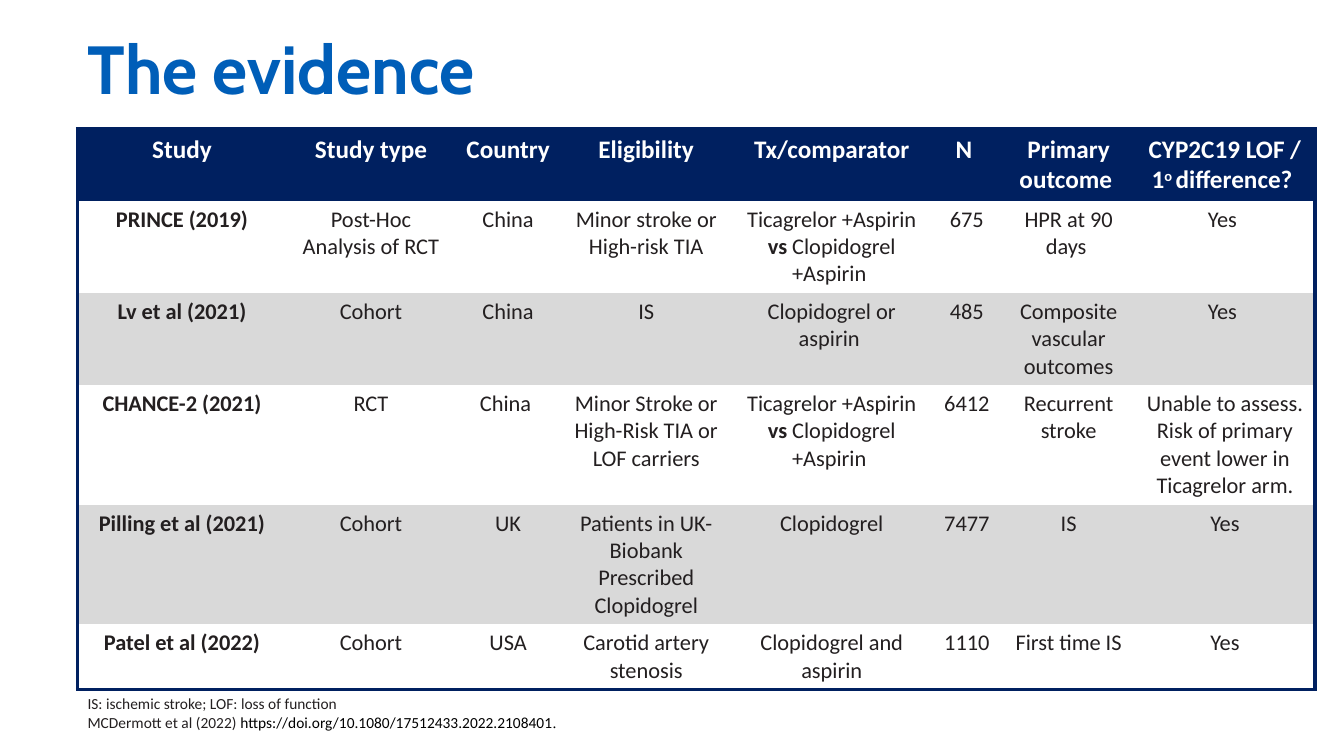
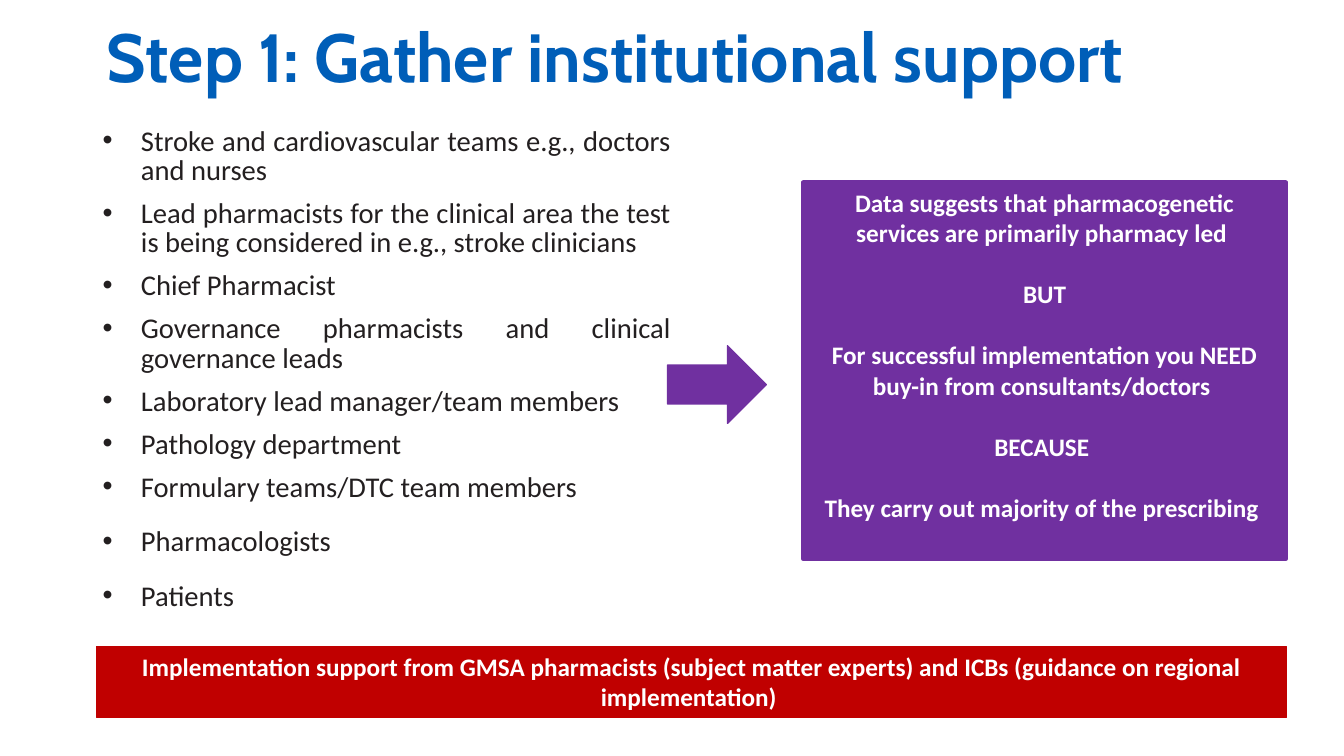
from lxml import etree
from pptx import Presentation
from pptx.dml.color import RGBColor
from pptx.enum.shapes import MSO_SHAPE
from pptx.enum.text import MSO_ANCHOR, MSO_AUTO_SIZE, PP_ALIGN
from pptx.oxml.ns import qn
from pptx.util import Inches, Pt

RECTANGLE, RIGHT_ARROW = MSO_SHAPE.RECTANGLE, MSO_SHAPE.RIGHT_ARROW
TOP, MIDDLE = MSO_ANCHOR.TOP, MSO_ANCHOR.MIDDLE
LEFT, CENTER, JUSTIFY = PP_ALIGN.LEFT, PP_ALIGN.CENTER, PP_ALIGN.JUSTIFY
NO_AUTOFIT = MSO_AUTO_SIZE.NONE

BLUE, NAVY, PURPLE, RED = "005EB8", "002060", "7030A0", "C00000"
INK, BLACK, WHITE, GREY = "231F20", "000000", "FFFFFF", "D9D9D9"
HEADING_FONT, BODY_FONT, SERIF_FONT = "Cabin", "Calibri", "Times New Roman"

TITLE_ONLY = 5
BULLET_INDENT = Inches(0.38)
COLUMN_WIDTHS = [2.07, 1.68, 1.04, 1.7, 1.98, 0.7, 1.32, 1.78]
ROW_HEIGHTS = [0.69, 0.88, 0.88, 1.15, 1.15, 0.62]

TICAGRELOR_VS_CLOPIDOGREL = [
    ("Ticagrelor +Aspirin ", {}),
    ("vs", {"bold": True}),
    (" Clopidogrel +Aspirin ", {}),
]
LOF_DIFFERENCE = [
    ("CYP2C19 LOF / 1", {}),
    ("o ", {"baseline": 30}),
    ("difference? ", {}),
]
STUDIES = [
    ["Study", "Study type", "Country ", "Eligibility", "Tx/comparator", "N ",
     "Primary outcome ", LOF_DIFFERENCE],
    ["PRINCE (2019)", "Post-Hoc Analysis of RCT", "China", "Minor stroke or High-risk TIA",
     TICAGRELOR_VS_CLOPIDOGREL, "675", "HPR at 90 days ", "Yes "],
    ["Lv et al (2021)", "Cohort", "China", "IS", "Clopidogrel or aspirin ", "485",
     "Composite vascular outcomes", "Yes "],
    ["CHANCE-2 (2021)", "RCT", "China ", "Minor Stroke or High-Risk TIA or LOF carriers",
     TICAGRELOR_VS_CLOPIDOGREL, "6412", "Recurrent stroke",
     "Unable to assess. Risk of primary event lower in Ticagrelor arm."],
    ["Pilling et al (2021)", "Cohort", "UK", "Patients in UK-Biobank Prescribed Clopidogrel",
     "Clopidogrel", "7477", "IS", "Yes"],
    ["Patel et al (2022)", "Cohort", "USA", "Carotid artery stenosis",
     "Clopidogrel and aspirin", "1110", "First time IS", "Yes"],
]
FOOTNOTE = [
    "IS: ischemic stroke; LOF: loss of function",
    [
        ("MCDermott et al (2022) ", {}),
        ("https://doi.org/10.1080/17512433.2022.2108401", {"color": BLACK}),
        (".", {"color": BLACK, "font": SERIF_FONT}),
    ],
]
SUPPORTERS = [
    "Stroke and cardiovascular teams e.g., doctors and nurses",
    "Lead pharmacists for the clinical area the test is being considered in "
    "e.g., stroke clinicians",
    "Chief Pharmacist ",
    "Governance pharmacists and clinical governance leads",
    "Laboratory lead manager/team members",
    "Pathology department ",
    "Formulary teams/DTC team members ",
    "Pharmacologists ",
    "Patients",
]
LOOSE_FROM = SUPPORTERS.index("Formulary teams/DTC team members ")
BUY_IN_ARGUMENT = [
    "Data suggests that pharmacogenetic services are primarily pharmacy led ",
    "BUT",
    "For successful implementation you NEED buy-in from consultants/doctors ",
    "BECAUSE ",
    "They carry out majority of the prescribing ",
]
SUPPORT_NOTE = [
    "Implementation support from GMSA pharmacists (subject matter experts) "
    "and ICBs (guidance on regional implementation) "
]


def rgb(color):
    """Turn a hex string into a colour."""
    return RGBColor.from_string(color)


class Deck:
    """Holds the presentation, its style and the current slide."""

    def __init__(self):
        """Start an empty widescreen presentation."""
        self.presentation = Presentation()
        self.presentation.slide_width = Inches(13.33)
        self.presentation.slide_height = Inches(7.5)
        self.slide = None

    def new_slide(self, title, left, top, width, height):
        """Add a slide and place its title."""
        layout = self.presentation.slide_layouts[TITLE_ONLY]
        self.slide = self.presentation.slides.add_slide(layout)
        heading = self.slide.shapes.title
        heading.left, heading.top = Inches(left), Inches(top)
        heading.width, heading.height = Inches(width), Inches(height)
        frame = heading.text_frame
        frame.auto_size = NO_AUTOFIT
        frame.vertical_anchor = MIDDLE
        self.fill_frame(frame, [title], 48.6, BLUE, bold=True, font=HEADING_FONT)
        frame.paragraphs[0].line_spacing = 0.9

    def fill_frame(self, frame, paragraphs, size, color, bold=False, align=LEFT,
                   font=BODY_FONT, gap=0):
        """Fill a frame with paragraphs, each plain text or a list of runs."""
        frame.word_wrap = True
        for index, content in enumerate(paragraphs):
            paragraph = frame.add_paragraph() if index else frame.paragraphs[0]
            paragraph.alignment = align
            paragraph.space_before = Pt(gap if index else 0)
            runs = [(content, {})] if isinstance(content, str) else content
            for text, changes in runs:
                run = paragraph.add_run()
                run.text = text
                run.font.name = changes.get("font", font)
                run.font.size = Pt(size)
                run.font.bold = changes.get("bold", bold)
                run.font.color.rgb = rgb(changes.get("color", color))
                if "baseline" in changes:
                    properties = run._r.get_or_add_rPr()
                    properties.set("baseline", str(changes["baseline"] * 1000))

    def text(self, paragraphs, left, top, width, height, size, **style):
        """Add a text box and return its frame."""
        box = self.slide.shapes.add_textbox(
            Inches(left), Inches(top), Inches(width), Inches(height))
        self.fill_frame(box.text_frame, paragraphs, size, INK, **style)
        return box.text_frame

    def bullets(self, items, left, top, width, height, loose_from):
        """Add a justified bullet list, looser from the given item on."""
        frame = self.text(items, left, top, width, height, 20.4, align=JUSTIFY, gap=10)
        for index, paragraph in enumerate(frame.paragraphs):
            properties = paragraph._p.get_or_add_pPr()
            properties.set("marL", str(BULLET_INDENT))
            properties.set("indent", str(-BULLET_INDENT))
            etree.SubElement(properties, qn("a:buFont"), typeface="Arial")
            etree.SubElement(properties, qn("a:buChar"), char="•")
            paragraph.line_spacing = 0.85
            if index >= loose_from:
                paragraph.space_after = Pt(8)

    def block(self, kind, color, line_width, left, top, width, height, paragraphs=(), gap=0):
        """Add a filled shape with optional bold white text."""
        shape = self.slide.shapes.add_shape(
            kind, Inches(left), Inches(top), Inches(width), Inches(height))
        shape.shadow.inherit = False
        shape.fill.solid()
        shape.fill.fore_color.rgb = rgb(color)
        shape.line.color.rgb = rgb(color)
        shape.line.width = Pt(line_width)
        shape.text_frame.vertical_anchor = TOP
        self.fill_frame(shape.text_frame, paragraphs, 18, WHITE, bold=True,
                        align=CENTER, gap=gap)

    def borders(self, cell, drawn_sides):
        """Draw the named cell sides in navy and clear the others."""
        properties = cell._tc.get_or_add_tcPr()
        for side in "LRTB":
            line = etree.SubElement(properties, qn(f"a:ln{side}"))
            if side in drawn_sides:
                line.set("w", str(Pt(3)))
                fill = etree.SubElement(line, qn("a:solidFill"))
                etree.SubElement(fill, qn("a:srgbClr"), val=NAVY)
            else:
                etree.SubElement(line, qn("a:noFill"))

    def table(self, rows, left, top, widths, heights):
        """Add a framed table with a navy header and grey alternate rows."""
        grid = self.slide.shapes.add_table(
            len(rows), len(widths), Inches(left), Inches(top),
            Inches(sum(widths)), Inches(sum(heights))).table
        grid.horz_banding = False
        for column, width in zip(grid.columns, widths):
            column.width = Inches(width)
        last_row, last_column = len(rows) - 1, len(widths) - 1
        for r, (row, height) in enumerate(zip(rows, heights)):
            grid.rows[r].height = Inches(height)
            header = r == 0
            background = NAVY if header else WHITE if r % 2 else GREY
            for c, content in enumerate(row):
                cell = grid.cell(r, c)
                edges = {"L": c == 0, "R": c == last_column, "T": header, "B": r == last_row}
                self.borders(cell, [side for side, outer in edges.items() if outer])
                cell.fill.solid()
                cell.fill.fore_color.rgb = rgb(background)
                self.fill_frame(cell.text_frame, [content], 18 if header else 16,
                                WHITE if header else INK, bold=header or c == 0,
                                align=CENTER)


def main():
    """Build both slides and save them."""
    deck = Deck()

    deck.new_slide("The evidence", 0.77, 0.49, 12.27, 0.46)
    deck.table(STUDIES, 0.77, 1.28, COLUMN_WIDTHS, ROW_HEIGHTS)
    deck.text(FOOTNOTE, 0.77, 6.84, 6.1, 0.47, 11)

    deck.new_slide("Step 1: Gather institutional support", 0.96, 0.33, 11.5, 0.53)
    deck.bullets(SUPPORTERS, 0.92, 1.22, 5.83, 5.19, LOOSE_FROM)
    deck.block(RECTANGLE, PURPLE, 3, 7.97, 1.81, 4.78, 3.74, BUY_IN_ARGUMENT, gap=22)
    deck.block(RIGHT_ARROW, PURPLE, 1, 6.62, 3.43, 0.98, 0.77)
    deck.block(RECTANGLE, RED, 0.75, 0.96, 6.41, 11.8, 0.71, SUPPORT_NOTE)

    deck.presentation.save("out.pptx")


if __name__ == "__main__":
    main()
